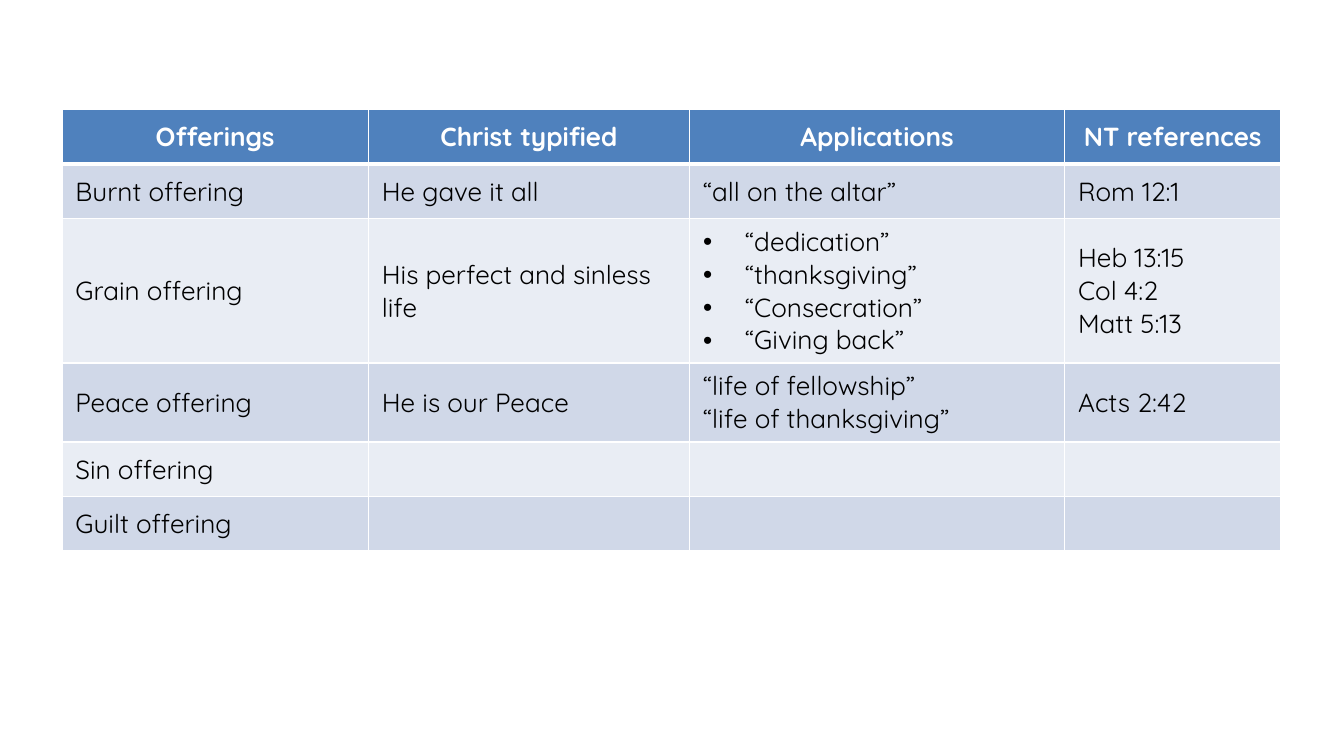
"""Build a slide with a table of the five offerings, their meaning and references."""
from lxml import etree
from pptx import Presentation
from pptx.dml.color import RGBColor
from pptx.enum.text import MSO_ANCHOR, PP_ALIGN
from pptx.oxml.ns import qn
from pptx.util import Pt

MIDDLE = MSO_ANCHOR.MIDDLE
CENTER, LEFT = PP_ALIGN.CENTER, PP_ALIGN.LEFT
HEADER_FILL, ODD_FILL, EVEN_FILL = "4F81BD", "D0D8E8", "E9EDF4"
WHITE, BLACK = "FFFFFF", "000000"
BULLET = "•"
BULLET_INDENT = Pt(22.5)
COLUMN_WIDTHS = [164.2, 172.1, 200.9, 115.9]
ROW_HEIGHT = 29.3

OFFERINGS = [
    ["Offerings", "Christ typified", "Applications", "NT references"],
    ["Burnt offering", "He gave it all", "“all on the altar”", "Rom 12:1"],
    ["Grain offering", "His perfect and sinless life",
     "•“dedication”\n•“thanksgiving”\n•“Consecration”\n•“Giving back”",
     "Heb 13:15\nCol 4:2\nMatt 5:13"],
    ["Peace offering", "He is our Peace",
     "“life of fellowship”\n“life of thanksgiving”", "Acts 2:42"],
    ["Sin offering", "", "", ""],
    ["Guilt offering", "", "", ""],
]


def color(value):
    return RGBColor.from_string(value)


def add_border(cell, side, width):
    line = etree.SubElement(cell._tc.get_or_add_tcPr(), qn(f"a:ln{side}"), w=str(Pt(width)))
    solid = etree.SubElement(line, qn("a:solidFill"))
    etree.SubElement(solid, qn("a:srgbClr"), val=WHITE)


prs = Presentation()
prs.slide_width, prs.slide_height = Pt(720), Pt(405)
slide = prs.slides.add_slide(prs.slide_layouts[6])

table = slide.shapes.add_table(
    len(OFFERINGS), len(COLUMN_WIDTHS), Pt(33.2), Pt(58.6),
    Pt(sum(COLUMN_WIDTHS)), Pt(ROW_HEIGHT * len(OFFERINGS))).table
for column, width in zip(table.columns, COLUMN_WIDTHS):
    column.width = Pt(width)

for row, entries in enumerate(OFFERINGS):
    table.rows[row].height = Pt(ROW_HEIGHT)
    is_header = row == 0
    row_fill = HEADER_FILL if is_header else ODD_FILL if row % 2 else EVEN_FILL
    font_format = {"name": "Quicksand", "size": Pt(14), "bold": is_header}
    for col, entry in enumerate(entries):
        cell = table.cell(row, col)
        cell.vertical_anchor = MIDDLE
        border_widths = {"L": 1, "R": 1, "T": 3 if row == 1 else 1, "B": 3 if is_header else 1}
        for side, width in border_widths.items():
            add_border(cell, side, width)
        cell.fill.solid()
        cell.fill.fore_color.rgb = color(row_fill)
        if not entry:
            continue
        cell.text = entry.replace(BULLET, "")
        for paragraph, line_text in zip(cell.text_frame.paragraphs, entry.split("\n")):
            paragraph.alignment = CENTER if is_header else LEFT
            if line_text.startswith(BULLET):
                properties = paragraph._p.get_or_add_pPr()
                properties.set("marL", str(BULLET_INDENT))
                properties.set("indent", str(-BULLET_INDENT))
                etree.SubElement(properties, qn("a:buFont"), typeface="Arial")
                etree.SubElement(properties, qn("a:buChar"), char=BULLET)
            font = paragraph.runs[0].font
            for attribute, value in font_format.items():
                setattr(font, attribute, value)
            font.color.rgb = color(WHITE if is_header else BLACK)

prs.save("out.pptx")
